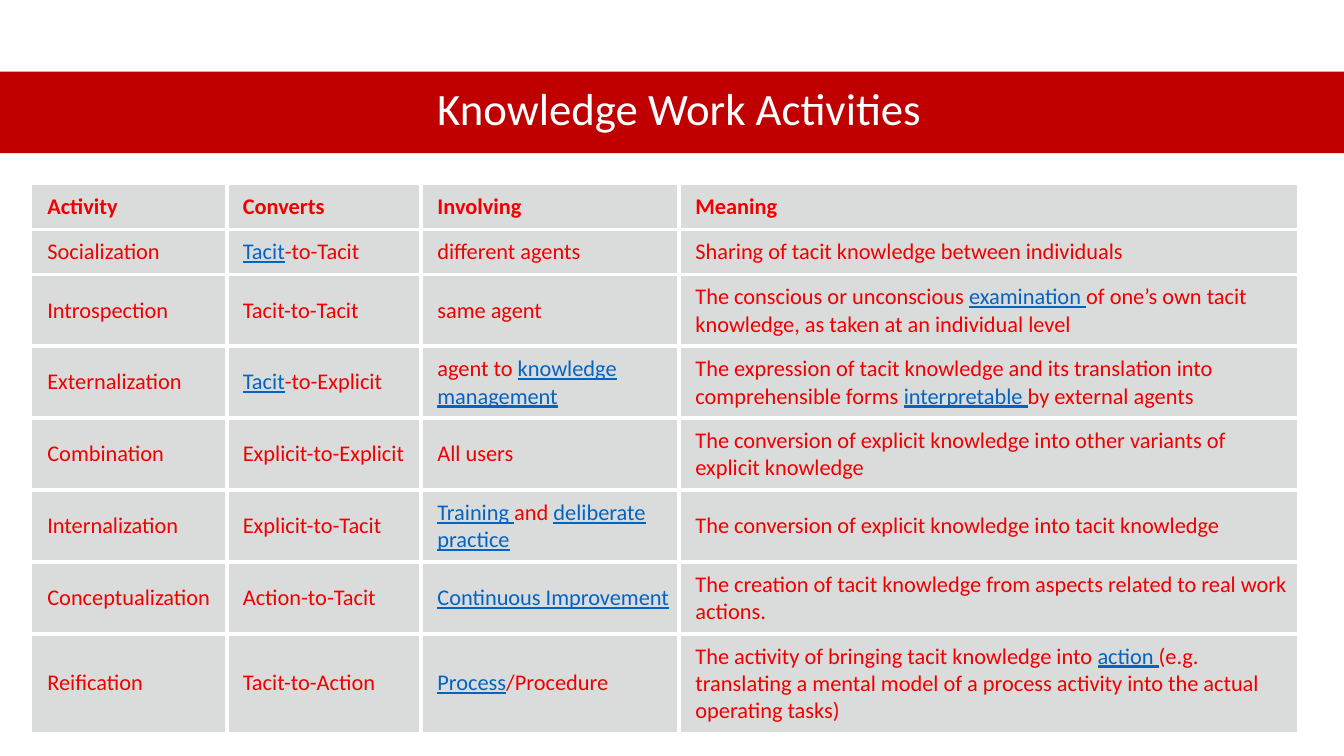
from dataclasses import dataclass

from lxml import etree
from pptx import Presentation
from pptx import util as u
from pptx.dml.color import RGBColor
from pptx.enum import shapes, text
from pptx.oxml.ns import qn


@dataclass(frozen=True)
class Theme:
    font: str = "Calibri"
    banner: str = "C00000"
    title: str = "FFFFFF"
    body: str = "F00000"
    link: str = "0563C1"
    cell: str = "878E8B"
    cell_opacity: int = 30
    rule: str = "FFFFFF"
    rule_width: float = 3
    title_size: int = 32
    body_size: int = 16


# The grid has ten columns and ten rows to the inch.
GRID = u.Inches(0.1)
COLUMNS, ROWS = 133.33, 75

COLUMN_WIDTHS = [19.4, 19.3, 25.6, 61.3]
ROW_HEIGHTS = [4.4] * 2 + [6.5] * 6

# Square brackets mark the words styled as links.
ACTIVITIES = [
    ["Activity", "Converts", "Involving", "Meaning"],
    ["Socialization", "[Tacit]-to-Tacit", "different agents",
     "Sharing of tacit knowledge between individuals"],
    ["Introspection", "Tacit-to-Tacit", "same agent",
     "The conscious or unconscious [examination ]of one’s own tacit knowledge, "
     "as taken at an individual level"],
    ["Externalization", "[Tacit]-to-Explicit", "agent to [knowledge management]",
     "The expression of tacit knowledge and its translation into comprehensible "
     "forms [interpretable ]by external agents"],
    ["Combination", "Explicit-to-Explicit", "All users",
     "The conversion of explicit knowledge into other variants of explicit knowledge"],
    ["Internalization", "Explicit-to-Tacit", "[Training ]and [deliberate practice]",
     "The conversion of explicit knowledge into tacit knowledge"],
    ["Conceptualization", "Action-to-Tacit", "[Continuous Improvement]",
     "The creation of tacit knowledge from aspects related to real work actions."],
    ["Reification", "Tacit-to-Action", "[Process]/Procedure",
     "The activity of bringing tacit knowledge into [action ](e.g. translating "
     "a mental model of a process activity into the actual operating tasks)"],
]


def cells(count):
    return round(count * GRID)


def add_span(para, words, *, font, size, color, bold=False, underline=False):
    span = para.add_run()
    span.text = words
    span.font.name = font
    span.font.size = u.Pt(size)
    span.font.bold = bold
    span.font.underline = underline
    span.font.color.rgb = RGBColor.from_string(color)


def split_links(marked):
    """Yield (words, is_link) for each stretch of bracketed or plain text."""
    for piece in marked.split("["):
        link, closed, plain = piece.partition("]")
        if not closed:
            link, plain = "", piece
        if link:
            yield link, True
        if plain:
            yield plain, False


class SlideBuilder:
    def __init__(self, page, theme):
        self.page = page
        self.theme = theme

    def banner(self, left, top, width, height):
        box = self.page.shapes.add_shape(
            shapes.MSO_SHAPE.RECTANGLE, *map(cells, (left, top, width, height)))
        box.shadow.inherit = False
        box.fill.solid()
        box.fill.fore_color.rgb = RGBColor.from_string(self.theme.banner)
        box.line.fill.background()

    def title(self, words, left, top, width, height):
        box = self.page.shapes.add_textbox(*map(cells, (left, top, width, height)))
        frame = box.text_frame
        frame.word_wrap = True
        frame.vertical_anchor = text.MSO_ANCHOR.MIDDLE
        para = frame.paragraphs[0]
        para.alignment = text.PP_ALIGN.CENTER
        para.line_spacing = 0.9
        add_span(para, words, font=self.theme.font,
                 size=self.theme.title_size, color=self.theme.title)

    def table(self, rows, left, top, widths, heights):
        table = self.page.shapes.add_table(
            len(rows), len(widths),
            *map(cells, (left, top, sum(widths), sum(heights)))).table
        table.first_row = table.horz_banding = False
        for column, width in zip(table.columns, widths):
            column.width = cells(width)
        for row, height in zip(table.rows, heights):
            row.height = cells(height)
        last_row, last_column = len(rows) - 1, len(widths) - 1
        for r, row in enumerate(rows):
            for c, marked in enumerate(row):
                cell = table.cell(r, c)
                self.fill_cell(cell, marked, bold=r == 0)
                inner_sides = {"lnL": c > 0, "lnR": c < last_column,
                               "lnT": r > 0, "lnB": r < last_row}
                self.rule_cell(cell, [side for side, inner in inner_sides.items() if inner])

    def fill_cell(self, cell, marked, bold):
        theme = self.theme
        cell.vertical_anchor = text.MSO_ANCHOR.MIDDLE
        cell.margin_left = u.Inches(0.16)
        cell.margin_right = cell.margin_top = cell.margin_bottom = u.Inches(0.09)
        cell.fill.solid()
        cell.fill.fore_color.rgb = RGBColor.from_string(theme.cell)
        color = cell._tc.tcPr.find(f"{qn('a:solidFill')}/{qn('a:srgbClr')}")
        etree.SubElement(color, qn("a:alpha"), val=str(theme.cell_opacity * 1000))
        para = cell.text_frame.paragraphs[0]
        for words, is_link in split_links(marked):
            add_span(para, words, font=theme.font, size=theme.body_size, bold=bold,
                     color=theme.link if is_link else theme.body, underline=is_link)

    def rule_cell(self, cell, sides):
        """Draw rules on the given sides; they must stand before the cell's fill."""
        properties = cell._tc.tcPr
        for position, side in enumerate(sides):
            line = etree.Element(qn(f"a:{side}"), w=str(u.Pt(self.theme.rule_width)))
            fill = etree.SubElement(line, qn("a:solidFill"))
            etree.SubElement(fill, qn("a:srgbClr"), val=self.theme.rule)
            properties.insert(position, line)


def main():
    deck = Presentation()
    deck.slide_width, deck.slide_height = cells(COLUMNS), cells(ROWS)
    page = deck.slides.add_slide(deck.slide_layouts[6])
    builder = SlideBuilder(page, Theme())
    builder.banner(0, 7.1, COLUMNS, 8.1)
    builder.title("Knowledge Work Activities", 6.1, 7, 122.6, 8.1)
    builder.table(ACTIVITIES, 3.1, 18.3, COLUMN_WIDTHS, ROW_HEIGHTS)
    deck.save("out.pptx")


if __name__ == "__main__":
    main()
